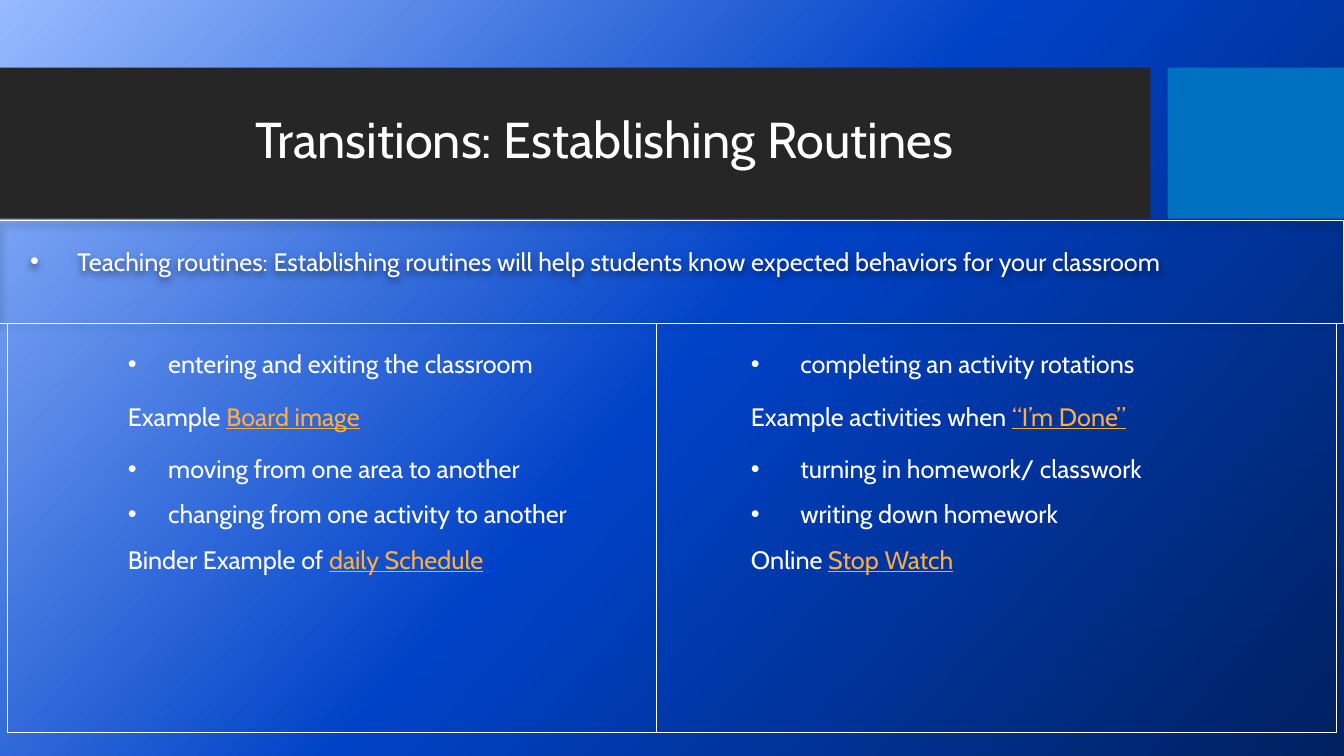
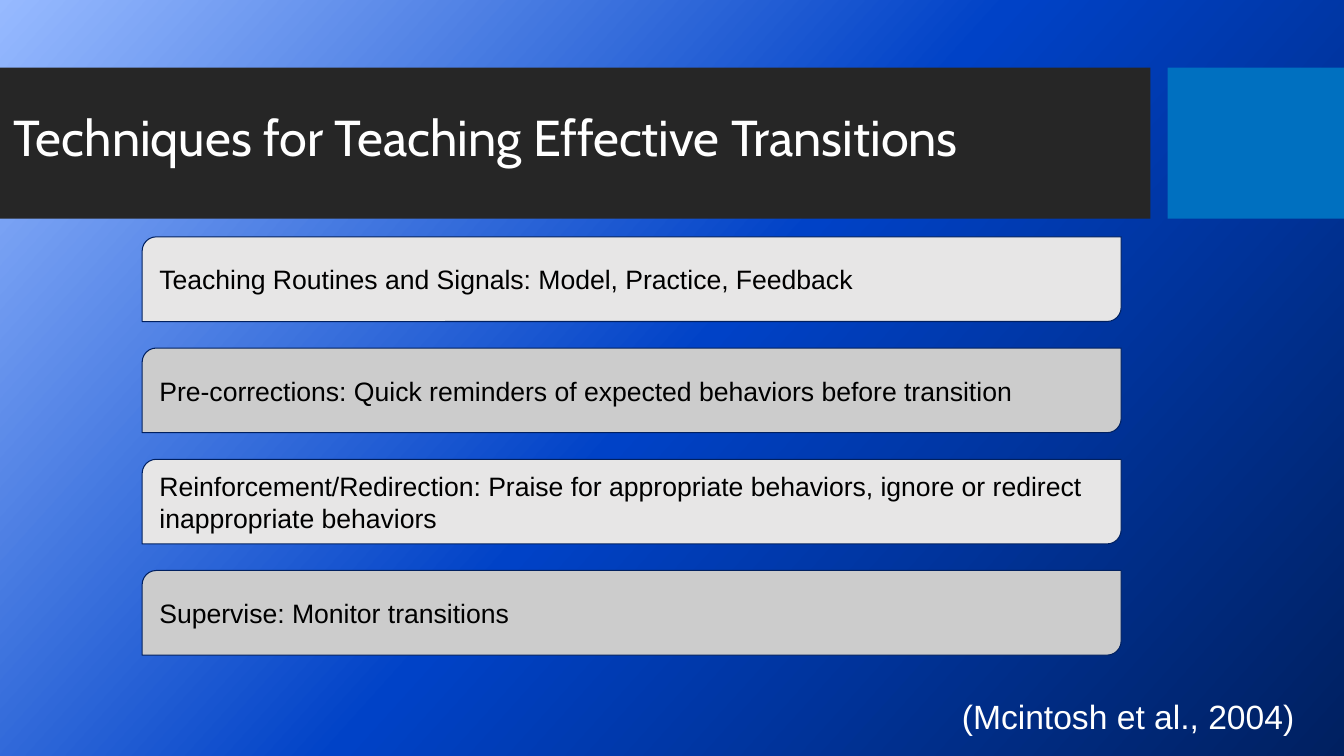
from lxml import etree
from pptx import Presentation
from pptx.dml.color import RGBColor
from pptx.enum.shapes import MSO_SHAPE
from pptx.enum.text import MSO_ANCHOR, MSO_AUTO_SIZE, PP_ALIGN
from pptx.oxml.ns import qn
from pptx.util import Inches, Pt

RECT, CARD = MSO_SHAPE.RECTANGLE, MSO_SHAPE.ROUND_2_DIAG_RECTANGLE
TOP, MIDDLE = MSO_ANCHOR.TOP, MSO_ANCHOR.MIDDLE
LEFT, CENTER = PP_ALIGN.LEFT, PP_ALIGN.CENTER
NO_AUTOFIT = MSO_AUTO_SIZE.NONE

COLORS = {
    "sky": "97BAFF", "blue": "0042C7", "navy": "002060",
    "band": "262626", "accent": "0070C0", "white": "FFFFFF",
    "black": "000000", "link": "FFAE3E",
    "card_light": "E7E6E6", "card_dark": "CCCCCC",
}
HEAD_FONT, CARD_FONT = "Cabin", "Arial"
TITLE_LAYOUT = 5
WIDTH, HEIGHT = 13.33, 7.5
BAND_TOP, BAND_HEIGHT = 0.67, 1.5
BAND_WIDTH, ACCENT_LEFT = 11.41, 11.58


def rgb(name):
    return RGBColor.from_string(COLORS[name])


def add_xml(parent, tag, **attributes):
    return etree.SubElement(parent, qn(tag), {k: str(v) for k, v in attributes.items()})


def add_color(parent, name):
    return add_xml(parent, "a:srgbClr", val=COLORS[name])


def set_background(master):
    fill = master.background.fill
    fill.gradient()
    fill.gradient_angle = 360 - 42
    stops = master.element.find(".//" + qn("p:bg")).find(".//" + qn("a:gsLst"))
    for stop in list(stops):
        stops.remove(stop)
    for percent, name in ((0, "sky"), (50, "blue"), (100, "navy")):
        add_color(add_xml(stops, "a:gs", pos=percent * 1000), name)


def indent(paragraph, left, hanging=0):
    """Set the left indent; a hanging part gets a white bullet."""
    p_pr = paragraph._p.get_or_add_pPr()
    p_pr.set("marL", str(Inches(left)))
    p_pr.set("indent", str(-Inches(hanging)))
    if hanging:
        add_color(add_xml(p_pr, "a:buClr"), "white")
        add_xml(p_pr, "a:buFont", typeface="Arial")
        add_xml(p_pr, "a:buChar", char="•")
    else:
        add_xml(p_pr, "a:buNone")


def write(frame, lines, size=18, font=HEAD_FONT, color="white", align=LEFT,
          anchor=TOP, insets=(0.1, 0.1), spacing=1.0, after=0):
    """Fill a frame; each line is a (plain text, link-styled text) pair."""
    frame.word_wrap = True
    frame.auto_size = NO_AUTOFIT
    frame.vertical_anchor = anchor
    frame.margin_left = frame.margin_right = Inches(insets[0])
    frame.margin_top = frame.margin_bottom = Inches(insets[1])
    for index, (plain, linked) in enumerate(lines):
        paragraph = frame.paragraphs[0] if index == 0 else frame.add_paragraph()
        paragraph.alignment = align
        paragraph.line_spacing = spacing
        paragraph.space_before = Pt(0)
        paragraph.space_after = Pt(after)
        for text, ink in ((plain, color), (linked, "link")):
            if text:
                run = paragraph.add_run()
                run.text = text
                run.font.name, run.font.size = font, Pt(size)
                run.font.color.rgb = rgb(ink)
                run.font.underline = ink == "link"
    return frame.paragraphs


def add_box(slide, box, kind=RECT, fill=None, line=None):
    shape = slide.shapes.add_shape(kind, *map(Inches, box))
    shape.shadow.inherit = False
    if fill:
        shape.fill.solid()
        shape.fill.fore_color.rgb = rgb(fill)
    else:
        shape.fill.background()
    if line:
        shape.line.color.rgb = rgb(line)
        shape.line.width = Pt(0.75)
    else:
        shape.line.fill.background()
    return shape


def add_titled_slide(prs, text, box, **text_format):
    slide = prs.slides.add_slide(prs.slide_layouts[TITLE_LAYOUT])
    add_box(slide, (0, BAND_TOP, BAND_WIDTH, BAND_HEIGHT), fill="band")
    add_box(slide, (ACCENT_LEFT, BAND_TOP, WIDTH - ACCENT_LEFT, BAND_HEIGHT),
            fill="accent")
    title = slide.shapes.title
    slide.shapes._spTree.append(title._element)
    title.left, title.top, title.width, title.height = map(Inches, box)
    write(title.text_frame, [(text, "")], size=36, anchor=MIDDLE, spacing=0.9,
          **text_format)
    return slide


def add_lead(slide, box, text):
    lead = add_box(slide, box, line="white")
    shadow = add_xml(lead._element.spPr.find(qn("a:effectLst")), "a:outerShdw",
                     blurRad=Pt(4.5), dist=Pt(1.5), dir=90 * 60000,
                     algn="t", rotWithShape=0)
    add_xml(add_color(shadow, "black"), "a:alpha", val=50000)
    indent(write(lead.text_frame, [(text, "")], spacing=1.5)[0], 0.67, 0.47)


def add_routines(slide, box, lines, left, hanging):
    """Bullet the plain lines; align lines with a link to the bullets."""
    panel = add_box(slide, box, line="white")
    paragraphs = write(panel.text_frame, lines, spacing=1.5)
    for paragraph in paragraphs[1:3]:
        paragraph.space_before = Pt(5)
    for paragraph, (_, linked) in zip(paragraphs, lines):
        if linked:
            indent(paragraph, left - hanging)
        else:
            indent(paragraph, left, hanging)


def add_cards(slide, box, texts, card_height):
    """Stack cards with equal gaps so that they fill the box."""
    left, top, width, height = box
    pitch = (height - card_height) / (len(texts) - 1)
    for row, text in enumerate(texts):
        card = add_box(slide, (left, top + row * pitch, width, card_height), CARD,
                       ("card_light", "card_dark")[row % 2], "navy")
        card.adjustments[0], card.adjustments[1] = 0.167, 0
        write(card.text_frame, [(text, "")], size=19, font=CARD_FONT,
              color="black", anchor=MIDDLE, insets=(0.13, 0.13))


def add_citation(slide, box, text):
    citation = slide.shapes.add_textbox(*map(Inches, box))
    write(citation.text_frame, [(text, "")], size=24, font=CARD_FONT,
          anchor=MIDDLE, insets=(0.13, 0.13), spacing=1.15, after=21)


def build_routines(prs):
    slide = add_titled_slide(prs, "Transitions: Establishing Routines",
                             (0.74, 0.82, 10.51, 1.18), align=CENTER,
                             insets=(0.1, 0.05))
    lead_top, panel_top, panel_height = 2.19, 3.21, 4.06
    edge, divider = 0.07, 6.51
    add_routines(slide, (divider, panel_top, WIDTH - edge - divider, panel_height), [
        ("completing an activity rotations", ""),
        ("Example activities when ", "“I’m Done”"),
        ("turning in homework/ classwork", ""),
        ("writing down homework", ""),
        ("Online ", "Stop Watch"),
    ], 1.33, 0.49)
    add_routines(slide, (edge, panel_top, divider - edge, panel_height), [
        ("entering and exiting the classroom", ""),
        ("Example ", "Board image"),
        ("moving from one area to another", ""),
        ("changing from one activity to another", ""),
        ("Binder Example of ", "daily Schedule"),
    ], 1.5, 0.4)
    add_lead(slide, (0, lead_top, WIDTH, panel_top - lead_top),
             "Teaching routines: Establishing routines will help students know "
             "expected behaviors for your classroom")


def build_techniques(prs):
    slide = add_titled_slide(prs, "Techniques for Teaching Effective Transitions",
                             (0, 0.6, 14.02, 1.58), insets=(0.13, 0.13))
    add_cards(slide, (1.41, 2.35, 9.71, 4.15), [
        "Teaching Routines and Signals: Model, Practice, Feedback",
        "Pre-corrections: Quick reminders of expected behaviors before transition",
        "Reinforcement/Redirection: Praise for appropriate behaviors, ignore or "
        "redirect inappropriate behaviors",
        "Supervise: Monitor transitions",
    ], card_height=0.84)
    add_citation(slide, (9.41, 6.73, 3.58, 0.68), "(Mcintosh et al., 2004)")


def main():
    prs = Presentation()
    prs.slide_width, prs.slide_height = Inches(WIDTH), Inches(HEIGHT)
    set_background(prs.slide_master)
    build_routines(prs)
    build_techniques(prs)
    prs.save("out.pptx")


if __name__ == "__main__":
    main()
